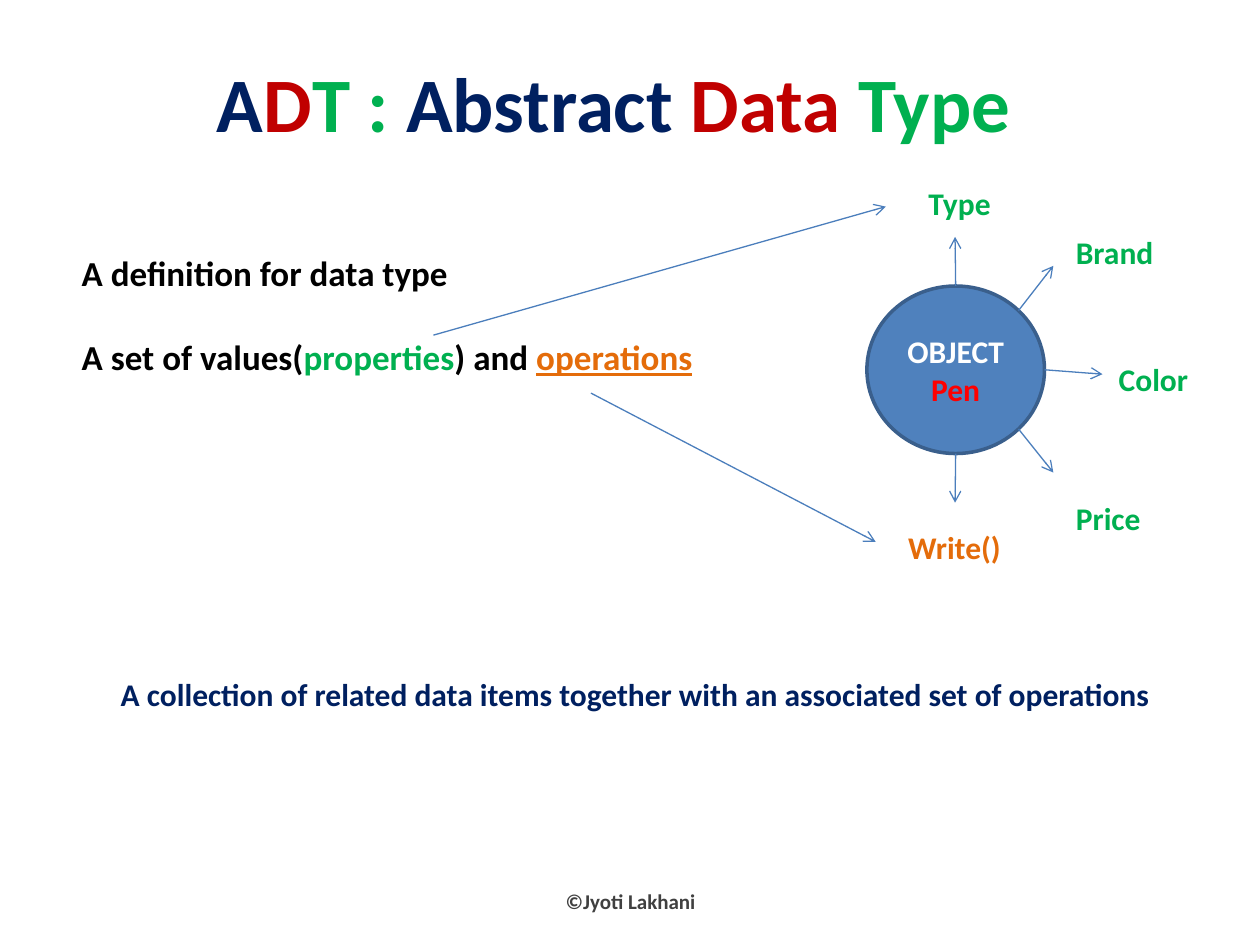
from dataclasses import dataclass
from math import cos, radians, sin

from lxml.etree import SubElement as Sub
from pptx import Presentation
from pptx.dml.color import RGBColor
from pptx.enum.shapes import MSO_CONNECTOR as Conn, MSO_SHAPE as Kind
from pptx.enum.text import MSO_ANCHOR as Anchor, PP_ALIGN as Align
from pptx.oxml.ns import qn
from pptx.util import Inches, Pt

# Grid of 100 columns by 75 rows on a 10 by 7.5 inch slide
CELL = Inches(0.1)
NAVY, RED, GREEN, ORANGE = "002060", "C00000", "00B050", "E46C0A"
BLACK, WHITE, GREY, PEN = "000000", "FFFFFF", "404040", "FF0000"
BLUE, EDGE, WIRE = "4F81BD", "3A5F8C", "4B7EBC"

Point = tuple[float, float]
Run = tuple[str, str]  # text, colour


@dataclass
class Box:
    col: float
    row: float
    wide: float
    high: float

    def place(self) -> list[int]:
        return [grid(n) for n in (self.col, self.row, self.wide, self.high)]


@dataclass
class Label:
    text: str
    box: Box
    color: str = GREEN


@dataclass
class Spoke:
    angle: float  # clockwise from the right
    tip: Point
    label: Label


def grid(n: float) -> int:
    return round(n * CELL)


def paint(code: str) -> RGBColor:
    return RGBColor.from_string(code)


def write(frame, lines: list[list[Run]], size: float,
          align=Align.LEFT, anchor=Anchor.TOP, wrap=True, gap=0) -> None:
    for key, val in {"word_wrap": wrap, "vertical_anchor": anchor}.items():
        setattr(frame, key, val)
    for i, line in enumerate(lines):
        para = frame.add_paragraph() if i else frame.paragraphs[0]
        para.alignment = align
        para.space_before = Pt(gap if i else 0)
        for text, color in line:
            run = para.add_run()
            run.text = text
            form = {"name": "Calibri", "size": Pt(size), "bold": True}
            if text == "operations":
                form["underline"] = True
            for key, val in form.items():
                setattr(run.font, key, val)
            run.font.color.rgb = paint(color)


def note(slide, box: Box, lines: list[list[Run]], size: float, **form) -> None:
    write(slide.shapes.add_textbox(*box.place()).text_frame, lines, size, **form)


def arrow(slide, start: Point, end: Point) -> None:
    wire = slide.shapes.add_connector(
        Conn.STRAIGHT, *[grid(n) for n in (*start, *end)])
    wire.line.color.rgb = paint(WIRE)
    wire.line.width = Pt(0.75)
    Sub(wire.line._get_or_add_ln(), qn("a:tailEnd"), type="arrow")
    Sub(wire._element.spPr, qn("a:effectLst"))


def rim(box: Box, angle: float) -> Point:
    turn = radians(angle)
    return (box.col + box.wide / 2 * (1 + cos(turn)),
            box.row + box.high / 2 * (1 + sin(turn)))


DISC = Box(68.8, 22.7, 14.1, 13.3)
SPOKES = [
    Spoke(-90, (75.8, 18.8), Label("Type", Box(72.7, 14.1, 7, 4))),
    Spoke(-45, (83.6, 21.1), Label("Brand", Box(84.4, 18, 8.2, 4))),
    Spoke(0, (87.5, 29.7), Label("Color", Box(87.8, 28.1, 7.5, 4))),
    Spoke(45, (83.6, 37.5), Label("Price", Box(84.4, 39.1, 7.2, 4))),
    Spoke(90, (75.8, 39.9), Label("Write()", Box(71.1, 41.4, 9.4, 4), ORANGE)),
]
LINKS = [((34.4, 26.6), (70.3, 16.4)), ((46.9, 31.2), (69.5, 43))]


def main() -> None:
    deck = Presentation()
    deck.slide_width, deck.slide_height = grid(100), grid(75)
    slide = deck.slides.add_slide(deck.slide_layouts[5])

    # Title
    title = slide.shapes.title
    sides = ("left", "top", "width", "height")
    for key, val in zip(sides, Box(6.2, 0, 85, 16.1).place()):
        setattr(title, key, val)
    write(title.text_frame,
          [[("A", NAVY), ("D", RED), ("T : ", GREEN),
            ("Abstract ", NAVY), ("Data ", RED), ("Type", GREEN)]],
          44, align=Align.CENTER, anchor=Anchor.MIDDLE)

    # Definition
    note(slide, Box(5.5, 19.5, 50.9, 17.8),
         [[("A definition for data type", BLACK)],
          [("A set of values(", BLACK), ("properties", GREEN),
           (") and ", BLACK), ("operations", ORANGE)]],
         20, wrap=False, gap=24)

    # Object with its properties and operation
    disc = slide.shapes.add_shape(Kind.OVAL, *DISC.place())
    disc.shadow.inherit = False
    disc.fill.solid()
    disc.fill.fore_color.rgb = paint(BLUE)
    disc.line.color.rgb = paint(EDGE)
    disc.line.width = Pt(2)
    write(disc.text_frame, [[("OBJECT", WHITE)], [("Pen", PEN)]], 18,
          align=Align.CENTER, anchor=Anchor.MIDDLE)
    for spoke in SPOKES:
        arrow(slide, rim(DISC, spoke.angle), spoke.tip)
        tag = spoke.label
        note(slide, tag.box, [[(tag.text, tag.color)]], 18, wrap=False)

    # Links from the definition to the object
    for start, end in LINKS:
        arrow(slide, start, end)

    # Summary and footer
    note(slide, Box(8.6, 53.1, 84.4, 4),
         [[("A collection of related data items together with "
            "an associated set of operations", NAVY)]], 18, wrap=False)
    note(slide, Box(34.2, 69.5, 31.7, 4), [[("©Jyoti Lakhani", GREY)]], 12,
         align=Align.CENTER, anchor=Anchor.MIDDLE)

    deck.save("out.pptx")


if __name__ == "__main__":
    main()
